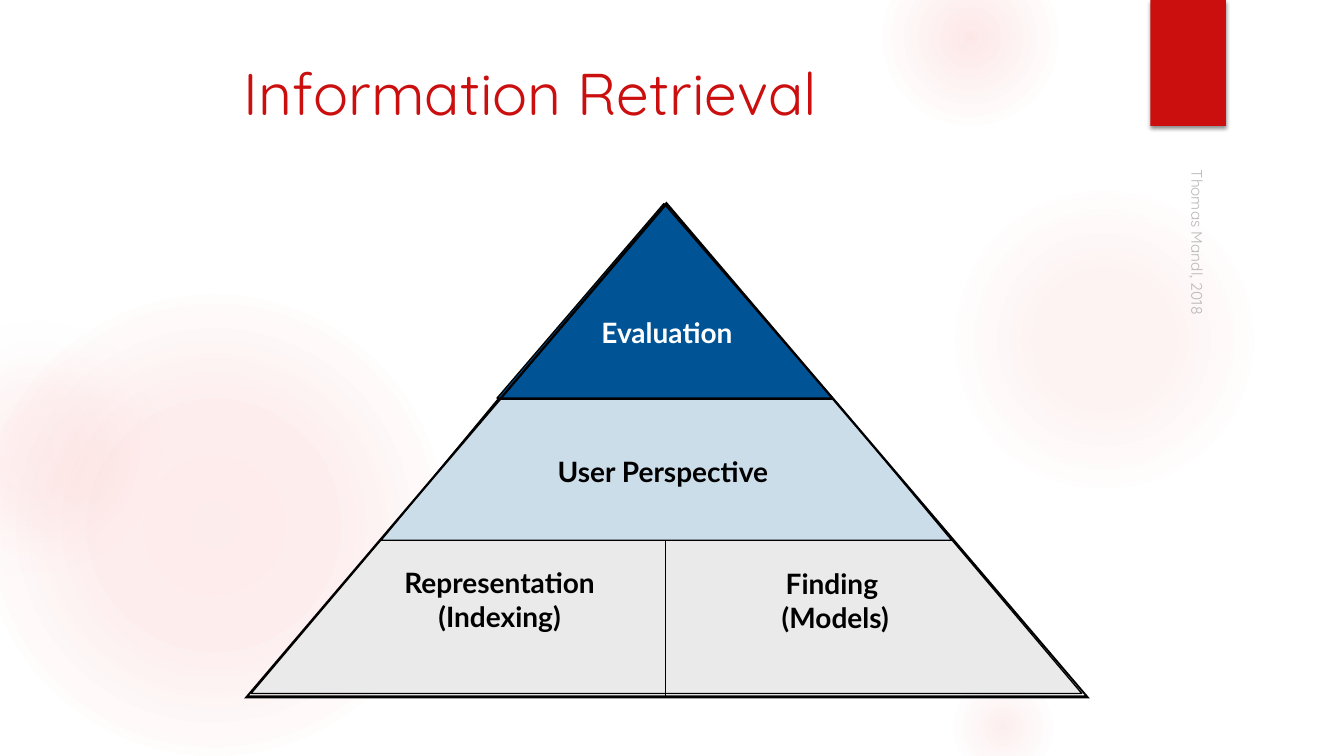
from lxml import etree
from pptx import Presentation
from pptx.dml.color import RGBColor
from pptx.enum.shapes import MSO_CONNECTOR, MSO_SHAPE
from pptx.enum.text import MSO_ANCHOR, PP_ALIGN
from pptx.oxml import parse_xml
from pptx.oxml.ns import qn
from pptx.util import Inches, Pt

RED = RGBColor(0xCB, 0x0F, 0x0F)
BLUE = RGBColor(0x00, 0x54, 0x96)
PALE_BLUE = RGBColor(0xCC, 0xDD, 0xEA)
PALE_GREY = RGBColor(0xEA, 0xEA, 0xEA)
GREY = RGBColor(0x8C, 0x8C, 0x8C)
BLACK = RGBColor(0, 0, 0)
WHITE = RGBColor(0xFF, 0xFF, 0xFF)
NS = 'xmlns:a="http://schemas.openxmlformats.org/drawingml/2006/main"'

prs = Presentation()
prs.slide_width, prs.slide_height = Inches(13.33), Inches(7.5)
s = prs.slides.add_slide(prs.slide_layouts[6])


def add_text(box, lines, size, font, color, bold=False, align=PP_ALIGN.LEFT,
             inset=(0.1, 0.05), wrap=True):
    tb = s.shapes.add_textbox(*[Inches(v) for v in box])
    tf = tb.text_frame
    tf.word_wrap = wrap
    tf.margin_left = tf.margin_right = Inches(inset[0])
    tf.margin_top = tf.margin_bottom = Inches(inset[1])
    for i, line in enumerate(lines):
        p = tf.paragraphs[0] if i == 0 else tf.add_paragraph()
        p.alignment = align
        for j, part in enumerate(line.split("\n")):
            if j:
                p.add_line_break()
            r = p.add_run()
            r.text = part
            r.font.size, r.font.name, r.font.bold = Pt(size), font, bold
            r.font.color.rgb = color
    return tb


def add_outline(contours, fill):
    fb = None
    for start, *rest in contours:
        pts = [(Inches(x), Inches(y)) for x, y in (start, *rest)]
        if fb is None:
            fb = s.shapes.build_freeform(*pts[0])
        else:
            fb.move_to(*pts[0])
        fb.add_line_segments(pts[1:], close=True)
    sp = fb.convert_to_shape()
    sp.shadow.inherit = False
    sp.fill.solid()
    sp.fill.fore_color.rgb = fill
    return sp


# Soft background circles: left, top, diameter, (position %, colour, opacity %)
glows = [
    (-0.17, 2.92, 4.58, [(0, "F35C5C", 11), (36, "F35C5C", 10), (75, "F35C5C", 0)]),
    (-0.92, 3.17, 2.58, [(0, "F35C5C", 8), (36, "F35C5C", 5), (71, "F3F3F3", 0)]),
    (9.41, 1.83, 3.08, [(0, "F35C5C", 7), (36, "F35C5C", 6), (69, "F35C5C", 0)]),
    (8.75, -0.5, 1.75, [(0, "F35C5C", 14), (36, "F35C5C", 7), (73, "F35C5C", 0)]),
    (9.41, 6.67, 1.08, [(0, "F35C5C", 10), (31, "F35C5C", 5), (66, "F35C5C", 0)]),
]
for x, y, d, stops in glows:
    sp = s.shapes.add_shape(MSO_SHAPE.OVAL, Inches(x), Inches(y), Inches(d), Inches(d))
    sp.shadow.inherit = False
    sp.line.fill.background()
    gs = "".join(f'<a:gs pos="{pos * 1000}"><a:srgbClr val="{c}">'
                 f'<a:alpha val="{a * 1000}"/></a:srgbClr></a:gs>' for pos, c, a in stops)
    grad = parse_xml(f'<a:gradFill {NS} rotWithShape="1"><a:gsLst>{gs}</a:gsLst>'
                     '<a:path path="circle"><a:fillToRect l="50000" t="50000" r="50000" '
                     'b="50000"/></a:path></a:gradFill>')
    sp._element.spPr.find(qn("a:prstGeom")).addnext(grad)

# Red tab with a soft shadow
tab = s.shapes.add_shape(MSO_SHAPE.RECTANGLE, Inches(11.41), 0, Inches(0.75), Inches(1.25))
tab.shadow.inherit = False
tab.fill.solid()
tab.fill.fore_color.rgb = RED
tab.line.fill.background()
tab._element.spPr.find(qn("a:effectLst")).append(parse_xml(
    f'<a:outerShdw {NS} blurRad="{Pt(3)}" dist="{Pt(2)}" dir="5400000" rotWithShape="0">'
    '<a:srgbClr val="000000"><a:alpha val="45000"/></a:srgbClr></a:outerShdw>'))

# Title
add_text((2.42, 0.56, 8.5, 1), ["Information Retrieval"], 42, "Quicksand", RED, inset=(0, 0))

# Pyramid levels
base = add_outline([[(2.49, 6.88), (3.81, 5.32), (9.41, 5.32), (10.73, 6.88)]], PALE_GREY)
top = s.shapes.add_shape(MSO_SHAPE.ISOSCELES_TRIANGLE, Inches(4.93), Inches(2.02),
                         Inches(3.33), Inches(1.93))
top.adjustments[0] = 0.497
top.shadow.inherit = False
top.fill.solid()
top.fill.fore_color.rgb = BLUE
middle = add_outline([[(3.78, 5.36), (4.94, 3.96), (8.27, 3.96), (9.44, 5.36)]], PALE_BLUE)
for level in (base, top, middle):
    level.line.color.rgb = BLACK
    level.line.width = Pt(1)

# Heavy frame around the pyramid: outer triangle with an inner hole
frame = add_outline([[(2.42, 6.93), (6.61, 2), (10.81, 6.93)],
                     [(2.47, 6.9), (10.76, 6.9), (6.61, 2.04)]], BLACK)
frame.line.fill.background()

# Level labels
labels = [
    ((7.66, 5.62, 1.25, 0.67), ["Finding ", "(Models)"], BLACK, (0, 0), False),
    ((3.52, 5.56, 2.87, 0.78), ["Representation\n(Indexing)"], BLACK, (0.1, 0.05), True),
    ((5.3, 4.46, 2.55, 0.44), ["User Perspective"], BLACK, (0.1, 0.05), False),
    ((5.77, 3.08, 1.69, 0.44), ["Evaluation"], WHITE, (0.1, 0.05), False),
]
for box, lines, color, inset, wrap in labels:
    add_text(box, lines, 20, "Lato", color, True, PP_ALIGN.CENTER, inset, wrap)

# Divider in the bottom level
divider = s.shapes.add_connector(MSO_CONNECTOR.STRAIGHT, Inches(6.6), Inches(5.36),
                                 Inches(6.6), Inches(6.92))
divider.line.color.rgb = BLACK
divider.line.width = Pt(0.75)
etree.SubElement(divider._element.spPr, qn("a:effectLst"))

# Rotated footer
footer = add_text((9.79, 3.53, 4.22, 0.33), ["Thomas Mandl, 2018"], 11, "Quicksand", GREY)
footer.rotation = 90
footer.text_frame.vertical_anchor = MSO_ANCHOR.BOTTOM
clr = footer._element.find(".//" + qn("a:srgbClr"))
etree.SubElement(clr, qn("a:alpha")).set("val", "60000")

prs.save("out.pptx")
